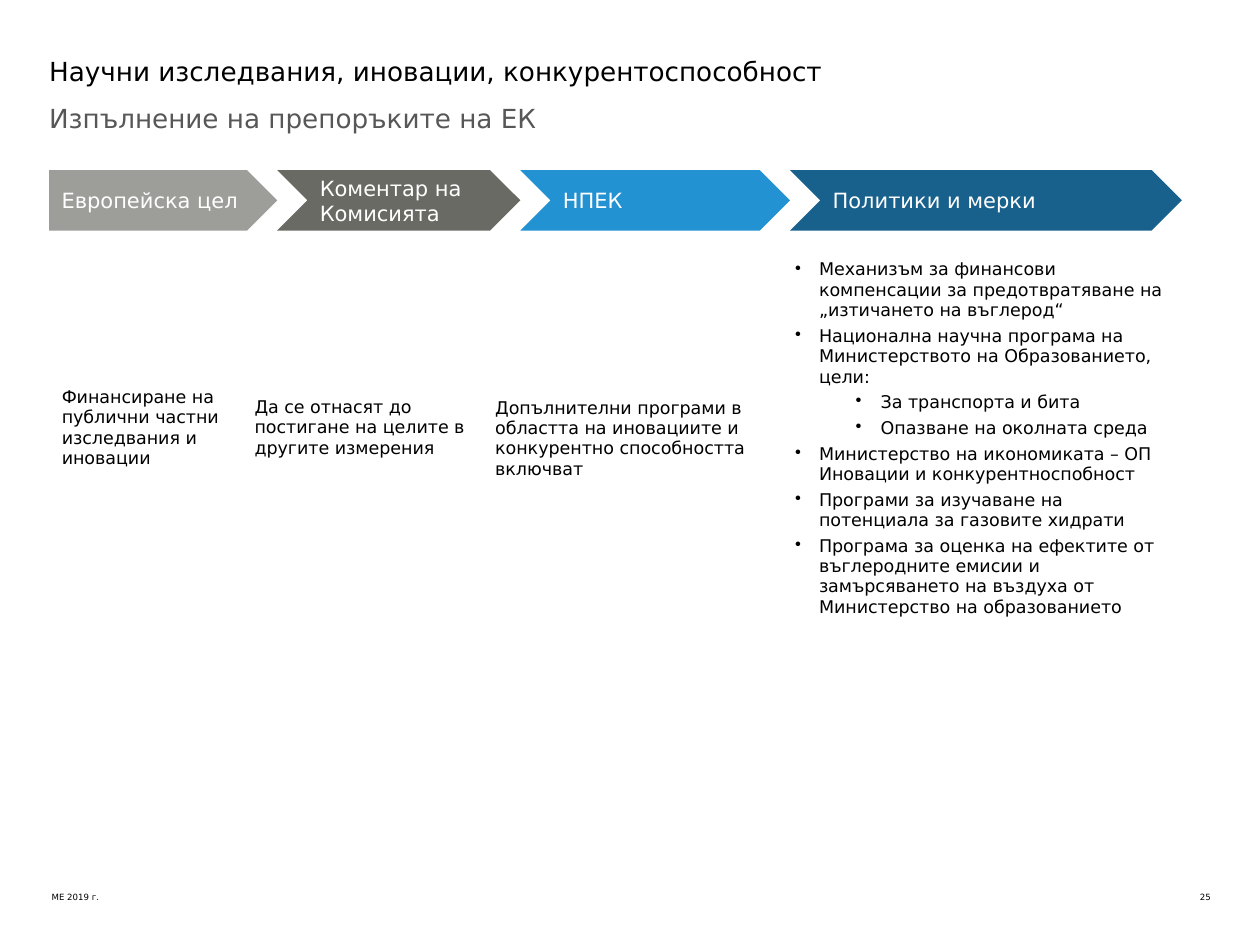
import pptx
import pptx.util
import pptx.dml.color
import pptx.enum.shapes
import pptx.enum.text
import pptx.oxml.ns
from lxml import etree

Inches = pptx.util.Inches
Pt = pptx.util.Pt
ALIGN = pptx.enum.text.PP_ALIGN
MIDDLE = pptx.enum.text.MSO_ANCHOR.MIDDLE
SHAPE = pptx.enum.shapes.MSO_SHAPE

FONT = "DejaVu Sans"
BLACK = "000000"
WHITE = "FFFFFF"
LEFT = 0.39
INSET = 0.1

STAGES = [
    ("Европейска цел", "9D9D99", 1.81),
    ("Коментар на Комисията", "6A6A65", 1.93),
    ("НПЕК", "2392D2", 2.14),
    ("Политики и мерки", "17618C", 3.11),
]
SUMMARIES = [
    ("Финансиране на публични частни изследвания и иновации", 0.27),
    ("Да се отнасят до постигане на целите в другите измерения", 0.27),
    ("Допълнителни програми в областта на иновациите и конкурентно способността включват", INSET),
]
MEASURES = [
    (0, "Механизъм за финансови компенсации за предотвратяване на „изтичането на въглерод“"),
    (0, "Национална научна програма на Министерството на Образованието, цели:"),
    (1, "За транспорта и бита"),
    (1, "Опазване на околната среда"),
    (0, "Министерство на икономиката – ОП Иновации и конкурентноспобност"),
    (0, "Програми за изучаване на потенциала за газовите хидрати"),
    (0, "Програма за оценка на ефектите от въглеродните емисии и замърсяването на въздуха "
        "от Министерство на образованието"),
]
COLUMN_WIDTHS = [1.53, 1.91, 2.38, 3.17]
BULLET_INDENTS = [(0.19, -0.19), (0.68, -0.2)]


def rgb(value):
    return pptx.dml.color.RGBColor.from_string(value)


def add_run(paragraph, text, size, color):
    run = paragraph.add_run()
    run.text = text
    run.font.name = FONT
    run.font.size = Pt(size)
    run.font.bold = False
    run.font.color.rgb = rgb(color)


def set_margins(target, margin, bottom=None):
    target.margin_left = target.margin_right = target.margin_top = Inches(margin)
    target.margin_bottom = Inches(margin if bottom is None else bottom)


def add_bullet(paragraph, level):
    paragraph.level = level
    margin, indent = BULLET_INDENTS[level]
    properties = paragraph._p.get_or_add_pPr()
    properties.set("marL", str(Inches(margin)))
    properties.set("indent", str(Inches(indent)))
    bullet = etree.SubElement(properties, pptx.oxml.ns.qn("a:buChar"))
    bullet.set("char", "•")


def add_text(slide, box, text, size, color=BLACK, align=ALIGN.LEFT):
    shape = slide.shapes.add_textbox(*map(Inches, box))
    frame = shape.text_frame
    frame.word_wrap = True
    set_margins(frame, 0)
    paragraph = frame.paragraphs[0]
    paragraph.alignment = align
    add_run(paragraph, text, size, color)


def add_heading(slide, left, top, width):
    add_text(slide, (left, top, width, 0.37),
             "Научни изследвания, иновации, конкурентоспособност", 15)
    add_text(slide, (left, top + 0.37, width, 0.4),
             "Изпълнение на препоръките на ЕК", 15, "575757")


def add_stages(slide, left, top, height):
    for index, (label, color, width) in enumerate(STAGES):
        kind = SHAPE.CHEVRON if index else SHAPE.PENTAGON
        shape = slide.shapes.add_shape(
            kind, Inches(left), Inches(top), Inches(width), Inches(height))
        shape.shadow.inherit = False
        shape.fill.solid()
        shape.fill.fore_color.rgb = rgb(color)
        shape.line.fill.background()
        frame = shape.text_frame
        frame.word_wrap = True
        frame.vertical_anchor = MIDDLE
        set_margins(frame, INSET)
        paragraph = frame.paragraphs[0]
        paragraph.alignment = ALIGN.LEFT
        add_run(paragraph, label, 12, WHITE)
        left += width


def add_details(slide, left, top, height):
    table = slide.shapes.add_table(
        1, len(COLUMN_WIDTHS), Inches(left), Inches(top),
        Inches(sum(COLUMN_WIDTHS)), Inches(height)).table
    table.first_row = False
    table.horz_banding = False
    for column, width in zip(table.columns, COLUMN_WIDTHS):
        column.width = Inches(width)
    for cell in table.iter_cells():
        cell.fill.background()
        cell.vertical_anchor = MIDDLE
        set_margins(cell, INSET)
    for index, (text, bottom) in enumerate(SUMMARIES):
        cell = table.cell(0, index)
        set_margins(cell, INSET, bottom)
        add_run(cell.text_frame.paragraphs[0], text, 10, BLACK)
    frame = table.cell(0, len(SUMMARIES)).text_frame
    for index, (level, text) in enumerate(MEASURES):
        paragraph = frame.add_paragraph() if index else frame.paragraphs[0]
        add_bullet(paragraph, level)
        if index:
            paragraph.space_before = Pt(3)
        add_run(paragraph, text, 10, BLACK)


def add_footer(slide, left, top, right):
    add_text(slide, (left, top, 4.39, 0.22), "МЕ 2019 г.", 4.9)
    add_text(slide, (right - 0.25, top, 0.25, 0.08), "25", 4.9, align=ALIGN.RIGHT)


def main():
    presentation = pptx.Presentation()
    presentation.slide_width = Inches(10)
    presentation.slide_height = Inches(7.5)
    slide = presentation.slides.add_slide(presentation.slide_layouts[6])
    add_heading(slide, LEFT, 0.44, 9.23)
    add_stages(slide, LEFT, 1.35, 0.48)
    add_details(slide, LEFT, 1.92, 2.89)
    add_footer(slide, 0.41, 7.08, 9.61)
    presentation.save("out.pptx")


if __name__ == "__main__":
    main()
